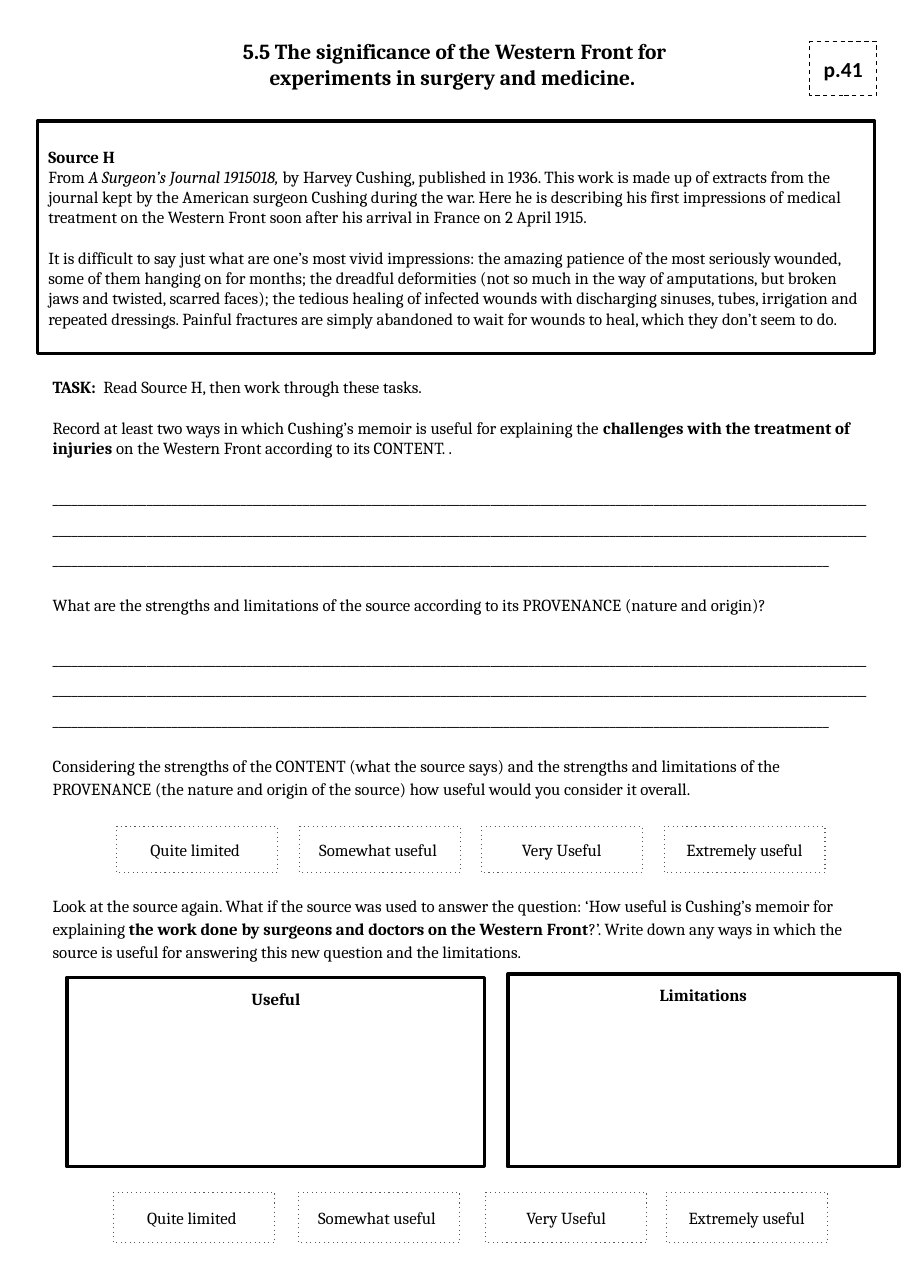
import pptx
import pptx.dml.color
import pptx.enum.dml
import pptx.enum.shapes
import pptx.enum.text
import pptx.util

Inches = pptx.util.Inches
Pt = pptx.util.Pt
Align = pptx.enum.text.PP_ALIGN
Anchor = pptx.enum.text.MSO_ANCHOR

BOLD = {"bold": True}
ITALIC = {"italic": True}
LINE = Pt(13.2)
LOOSE_LINE = Pt(15.2)


def colour(value):
    return pptx.dml.color.RGBColor.from_string(value)


def apply(target, values):
    for name, value in values.items():
        setattr(target, name, value)


class Worksheet:
    """Holds the text style and the current slide."""
    ink = "000000"
    text_style = {"name": "Cambria", "size": Pt(11), "bold": False, "italic": False}

    def __init__(self, slide):
        self.slide = slide

    def fill_text(self, box, paragraphs, anchor=Anchor.TOP, **style):
        frame = box.text_frame
        margins = dict.fromkeys(
            ("margin_left", "margin_top", "margin_right", "margin_bottom"), Inches(0.1))
        apply(frame, {**margins, "word_wrap": True, "vertical_anchor": anchor,
                      "auto_size": pptx.enum.text.MSO_AUTO_SIZE.NONE})
        for index, (layout, spans) in enumerate(paragraphs):
            para = frame.add_paragraph() if index else frame.paragraphs[0]
            apply(para, {"alignment": Align.LEFT, **layout})
            for text, emphasis in spans:
                span = para.add_run()
                span.text = text
                apply(span.font, {**self.text_style, **style, **emphasis})
                span.font.color.rgb = colour(self.ink)

    def title(self, place, text):
        box = self.slide.shapes.title
        apply(box, dict(zip(("left", "top", "width", "height"), map(Inches, place))))
        self.fill_text(box, [({"alignment": Align.CENTER}, [(text, BOLD)])], size=Pt(14))

    def text(self, place, paragraphs):
        self.fill_text(self.slide.shapes.add_textbox(*map(Inches, place)), paragraphs)

    def frame(self, place, paragraphs, line=ink, weight=2.25, dash=None, fill=None,
              anchor=Anchor.MIDDLE, **style):
        box = self.slide.shapes.add_shape(
            pptx.enum.shapes.MSO_SHAPE.RECTANGLE, *map(Inches, place))
        box.shadow.inherit = False
        if fill:
            box.fill.solid()
            box.fill.fore_color.rgb = colour(fill)
        else:
            box.fill.background()
        box.line.color.rgb = colour(line)
        box.line.width = Pt(weight)
        if dash:
            box.line.dash_style = pptx.enum.dml.MSO_LINE.DASH
            box._element.xpath(".//a:prstDash")[0].set("val", dash)
        self.fill_text(box, paragraphs, anchor, **style)

    def label(self, place, text, **look):
        self.frame(place, [({"alignment": Align.CENTER}, [(text, {})])], **look)

    def options(self, lefts, top, height):
        names = ("Quite limited ", "Somewhat useful ", "Very Useful", "Extremely useful")
        for left, name in zip(lefts, names):
            self.label((left, top, 1.46, height), name, line="595959",
                       weight=0.75, dash="dot", fill="FFFFFF")


def main():
    deck = pptx.Presentation()
    deck.slide_width, deck.slide_height = Inches(8.27), Inches(11.69)
    sheet = Worksheet(deck.slides.add_slide(deck.slide_layouts[5]))

    # Heading and page reference
    sheet.title((1.54, 0.25, 5.18, 0.57),
                "5.5 The significance of the Western Front for experiments in "
                "surgery and medicine. ")
    sheet.label((7.35, 0.38, 0.61, 0.49), "p.41", weight=0.75, dash="dash",
                fill="FFFFFF", name="Calibri", size=Pt(14), bold=True)

    # Source extract
    sheet.frame((0.34, 1.1, 7.6, 2.11), [
        ({}, [("Source H", BOLD)]),
        ({}, [("From ", {}), ("A Surgeon’s Journal 1915018, ", ITALIC),
              ("by Harvey Cushing, published in 1936. This work is made up of extracts "
               "from the journal kept by the American surgeon Cushing during the war. "
               "Here he is describing his first impressions of medical treatment on the "
               "Western Front soon after his arrival in France on 2 April 1915.", {})]),
        ({"space_before": LINE}, [(
            "It is difficult to say just what are one’s most vivid impressions: the "
            "amazing patience of the most seriously wounded, some of them hanging on for "
            "months; the dreadful deformities (not so much in the way of amputations, but "
            "broken jaws and twisted, scarred faces); the tedious healing of infected "
            "wounds with discharging sinuses, tubes, irrigation and repeated dressings. "
            "Painful fractures are simply abandoned to wait for wounds to heal, which "
            "they don’t seem to do.", {})]),
    ])

    # Tasks with ruled answer lines
    answer = [("_" * 384, {})]
    loose = {"line_spacing": 1.15, "space_before": LOOSE_LINE}
    sheet.text((0.38, 3.32, 7.6, 6.15), [
        ({}, [("TASK: ", BOLD), (" Read Source H, then work through these tasks.", {})]),
        ({"space_before": LINE}, [
            ("Record at least two ways in which Cushing’s memoir is useful for "
             "explaining the ", {}),
            ("challenges with the treatment of injuries ", BOLD),
            ("on the Western Front according to its CONTENT. .", {})]),
        ({"line_spacing": 1.5, "space_before": LINE}, answer),
        (loose, [("What are the strengths and limitations of the source according to "
                  "its PROVENANCE (nature and origin)?", {})]),
        ({"line_spacing": 1.5, "space_before": LOOSE_LINE}, answer),
        (loose, [("Considering the strengths of the CONTENT (what the source says) and "
                  "the strengths and limitations of the PROVENANCE (the nature and "
                  "origin of the source) how useful would you consider it overall.", {})]),
        ({**loose, "space_before": 4 * LOOSE_LINE}, [
            ("Look at the source again. What if the source was used to answer the "
             "question: ‘How useful is Cushing’s memoir for explaining", {}),
            (" the work done by surgeons and doctors on the Western Front", BOLD),
            ("?’. Write down any ways in which the source is useful for answering this "
             "new question and the limitations.", {})]),
    ])

    # Answer boxes
    for place, name in (((0.61, 8.87, 3.79, 1.72), "Useful"),
                        ((4.61, 8.84, 3.55, 1.75), "Limitations")):
        sheet.label(place, name, anchor=Anchor.TOP, bold=True)

    # Rating options
    sheet.options((1.06, 2.72, 4.37, 6.03), 7.5, 0.42)
    sheet.options((1.03, 2.71, 4.41, 6.05), 10.82, 0.46)

    deck.save("out.pptx")


if __name__ == "__main__":
    main()
